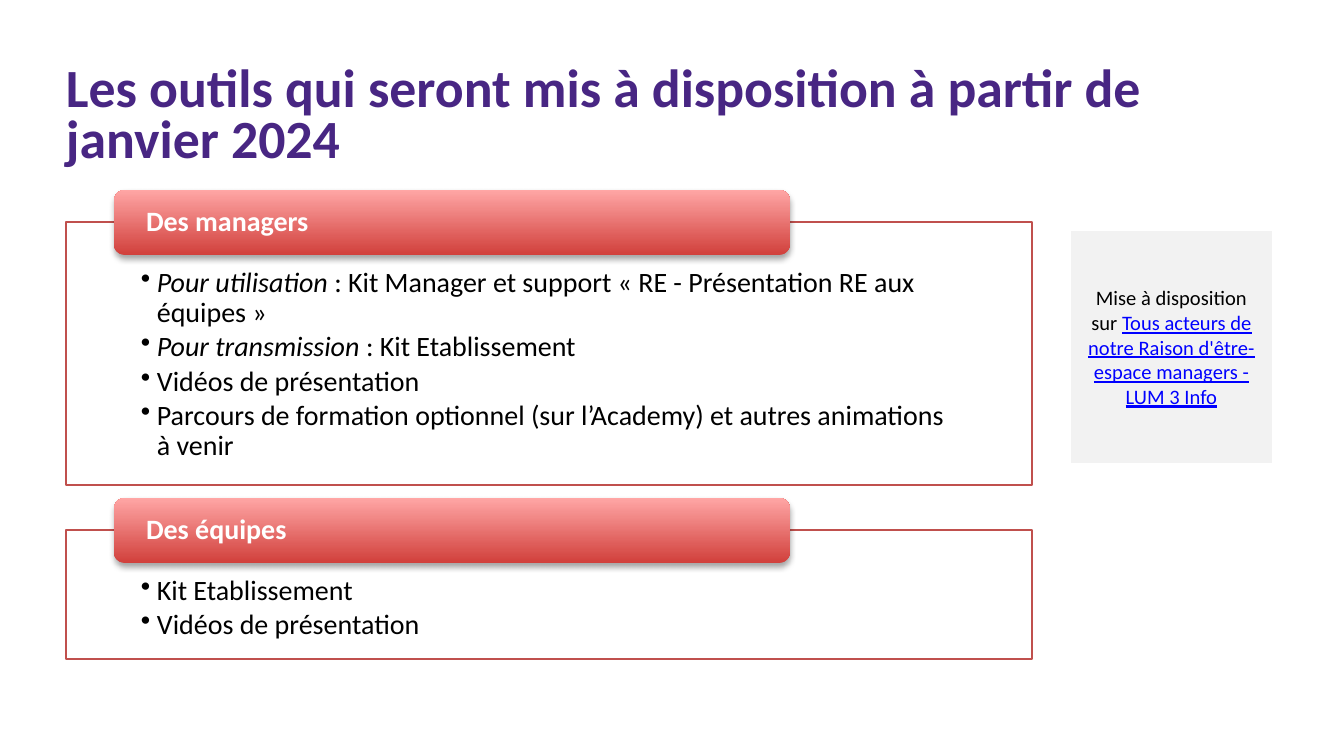
"""Slide listing the tools made available to managers and teams."""
from dataclasses import dataclass

from lxml import etree
from pptx import Presentation
from pptx.dml.color import RGBColor
from pptx.enum.shapes import MSO_SHAPE
from pptx.enum.text import MSO_ANCHOR, PP_ALIGN
from pptx.oxml.ns import qn
from pptx.util import Emu, Pt

RECT, ROUNDED = MSO_SHAPE.RECTANGLE, MSO_SHAPE.ROUNDED_RECTANGLE
TOP, MIDDLE = MSO_ANCHOR.TOP, MSO_ANCHOR.MIDDLE
LEFT, CENTER = PP_ALIGN.LEFT, PP_ALIGN.CENTER
PX = 914400 / 134.4
FONT = "Calibri"
COLORS = {
    "title": "482683", "border": "C0504D", "tab_dark": "D1403C", "tab_light": "FFA6A5",
    "white": "FFFFFF", "black": "000000", "note": "F2F2F2", "link": "0000FF",
}
PANEL_X, PANEL_W = 66, 966
TAB_X, TAB_W, TAB_H = 114, 676, 65
INDENT = 16


@dataclass(frozen=True)
class Span:
    text: str
    size: float = 15
    color: str = "black"
    bold: bool = False
    italic: bool = False
    underline: bool = False


@dataclass(frozen=True)
class Section:
    heading: str
    top: int
    height: int
    items: tuple[tuple[Span, ...], ...]


SECTIONS = (
    Section("Des managers", 222, 263, (
        (Span("Pour utilisation ", italic=True),
         Span(": Kit Manager et support « RE - Présentation RE aux équipes »")),
        (Span("Pour transmission ", italic=True), Span(": Kit Etablissement")),
        (Span("Vidéos de présentation"),),
        (Span("Parcours de formation optionnel (sur l’Academy) et autres animations à venir"),),
    )),
    Section("Des équipes", 530, 129, (
        (Span("Kit Etablissement"),),
        (Span("Vidéos de présentation"),),
    )),
)
NOTE = (
    Span("Mise à disposition sur ", 11),
    Span("Tous acteurs de notre Raison d'être-espace managers - LUM 3 Info", 11, "link",
         underline=True),
)


def px(n: int) -> Emu:
    """Turn pixels into EMU."""
    return Emu(round(n * PX))


def rgb(name: str) -> RGBColor:
    """Look up a named colour."""
    return RGBColor.from_string(COLORS[name])


def add_box(s, kind, x: int, y: int, w: int, h: int, fill: str, line: str = "",
            width: float = 0):
    """Draw a filled shape without shadow."""
    sp = s.shapes.add_shape(kind, px(x), px(y), px(w), px(h))
    sp.shadow.inherit = False
    sp.fill.solid()
    sp.fill.fore_color.rgb = rgb(fill)
    if line:
        sp.line.color.rgb = rgb(line)
        sp.line.width = Pt(width)
    else:
        sp.line.fill.background()
    return sp


def set_frame(tf, insets: tuple[int, int, int, int], anchor) -> None:
    """Set wrapping, insets (left, top, right, bottom) and anchor."""
    tf.word_wrap = True
    tf.vertical_anchor = anchor
    tf.margin_left, tf.margin_top, tf.margin_right, tf.margin_bottom = map(px, insets)


def write(p, spans: tuple[Span, ...], align=LEFT, spacing: float = 0.9) -> None:
    """Fill a paragraph with formatted runs."""
    p.alignment = align
    p.line_spacing = spacing
    for span in spans:
        r = p.add_run()
        r.text = span.text
        font = r.font
        font.name, font.size = FONT, Pt(span.size)
        font.bold, font.italic, font.underline = span.bold, span.italic, span.underline
        font.color.rgb = rgb(span.color)


def add_bullet(p) -> None:
    """Give a paragraph a hanging bullet."""
    p.level = 1
    p.space_after = Pt(2.25)
    pPr = p._p.get_or_add_pPr()
    pPr.set("marL", str(px(INDENT)))
    pPr.set("indent", str(-px(INDENT)))
    etree.SubElement(pPr, qn("a:buChar"), char="•")


def add_shadow(sp) -> None:
    """Add a soft shadow below a shape."""
    effects = sp._element.spPr.find(qn("a:effectLst"))
    shadow = etree.SubElement(effects, qn("a:outerShdw"), blurRad=str(Pt(3.1)),
                              dist=str(Pt(1.8)), dir="5400000", rotWithShape="0")
    color = etree.SubElement(shadow, qn("a:srgbClr"), val=COLORS["black"])
    etree.SubElement(color, qn("a:alpha"), val="35000")


def add_section(s, section: Section) -> None:
    """Draw a bordered bullet panel with its heading tab."""
    panel = add_box(s, RECT, PANEL_X, section.top, PANEL_W, section.height,
                    "white", "border", 0.75)
    tf = panel.text_frame
    set_frame(tf, (75, 46, 75, 16), TOP)
    for i, spans in enumerate(section.items):
        p = tf.add_paragraph() if i else tf.paragraphs[0]
        add_bullet(p)
        write(p, spans)

    tab = add_box(s, ROUNDED, TAB_X, section.top - TAB_H // 2, TAB_W, TAB_H, "tab_dark")
    tab.fill.gradient()
    tab.fill.gradient_angle = 90
    for stop, name in zip(tab.fill.gradient_stops, ("tab_dark", "tab_light")):
        stop.color.rgb = rgb(name)
    add_shadow(tab)
    set_frame(tab.text_frame, (29, 0, 29, 0), MIDDLE)
    write(tab.text_frame.paragraphs[0], (Span(section.heading, color="white", bold=True),))


def main() -> None:
    """Build and save the slide."""
    prs = Presentation()
    prs.slide_width, prs.slide_height = px(1344), px(756)
    s = prs.slides.add_slide(prs.slide_layouts[6])

    title = s.shapes.add_textbox(px(66), px(66), px(1208), px(58))
    set_frame(title.text_frame, (0, 0, 0, 0), TOP)
    write(title.text_frame.paragraphs[0],
          (Span("Les outils qui seront mis à disposition à partir de janvier 2024",
                28.8, "title", bold=True),), spacing=0.8)

    for section in SECTIONS:
        add_section(s, section)

    note = add_box(s, RECT, 1069, 229, 205, 236, "note", "white", 2)
    set_frame(note.text_frame, (13, 7, 13, 7), MIDDLE)
    write(note.text_frame.paragraphs[0], NOTE, CENTER, 1.0)

    prs.save("out.pptx")


if __name__ == "__main__":
    main()
